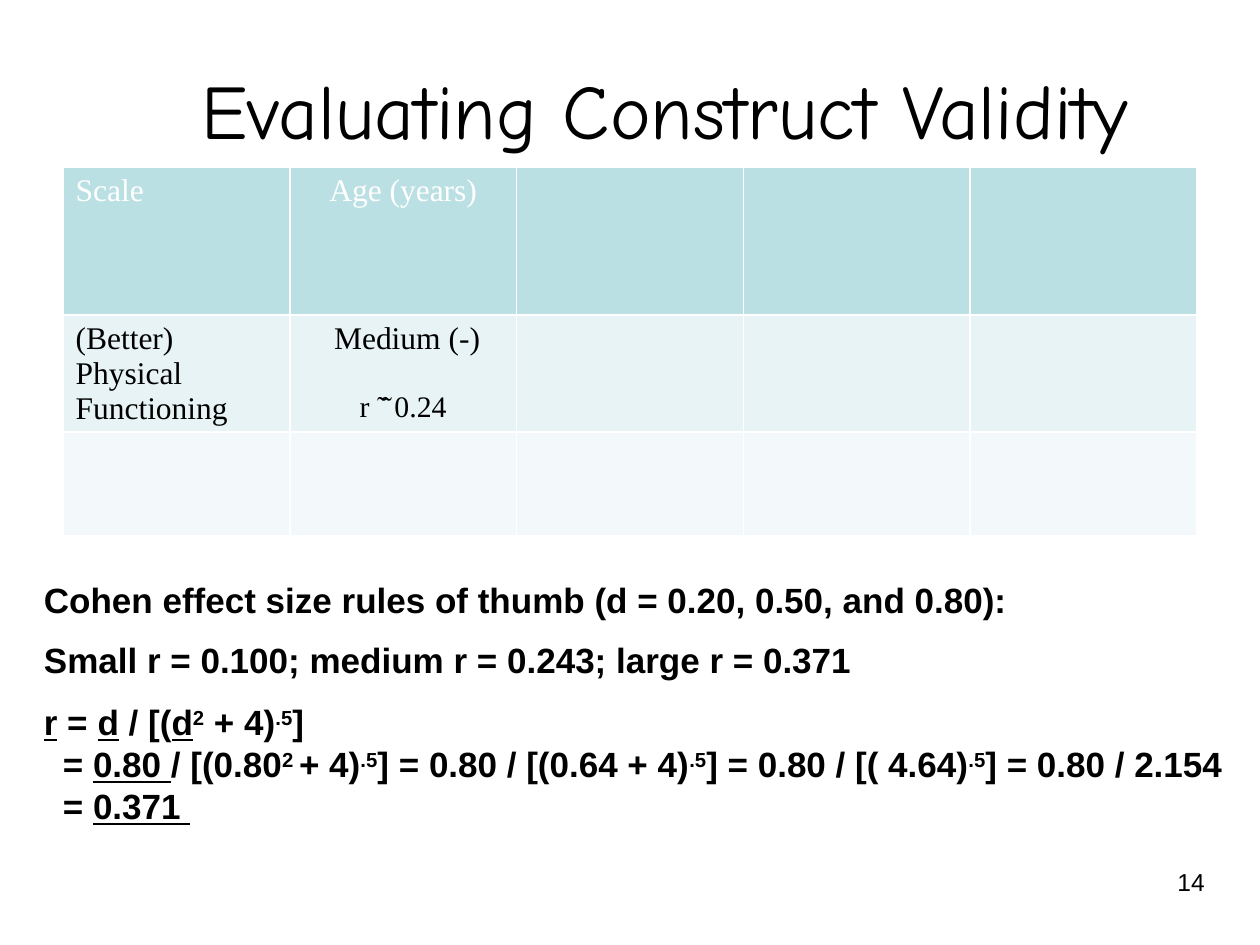
from dataclasses import dataclass

from pptx import Presentation
from pptx.dml.color import RGBColor
from pptx.enum.text import MSO_ANCHOR as Anchor, MSO_AUTO_SIZE as AutoSize, PP_ALIGN as Align
from pptx.util import Inches, Pt

BLACK, WHITE = "000000", "FFFFFF"
ROW_FILLS = ["BBE0E3", "E7F3F4", "F3F9FA"]
ROW_HEIGHTS = [1.17, 0.93, 0.82]
COLUMN_COUNT, COLUMN_WIDTH = 5, 1.8
EQUALS_INDENT = 0.15


@dataclass
class Run:
    text: str
    underline: bool = False
    raised: bool = False


@dataclass
class Line:
    runs: list[Run]
    before: float = 0
    indent: float = 0


@dataclass
class CellText:
    row: int
    column: int
    lines: list[str]
    color: str = BLACK
    align: Align = Align.CENTER


def color_of(value: str) -> RGBColor:
    return RGBColor.from_string(value)


def format_font(font, name: str, size: float, color: str = BLACK, bold: bool = False) -> None:
    for key, value in {"name": name, "size": Pt(size), "bold": bold}.items():
        setattr(font, key, value)
    font.color.rgb = color_of(color)


def paragraph_at(frame, index: int):
    return frame.paragraphs[0] if index == 0 else frame.add_paragraph()


def add_text_box(slide, left: float, top: float, width: float, height: float):
    box = slide.shapes.add_textbox(Inches(left), Inches(top), Inches(width), Inches(height))
    box.text_frame.word_wrap = True
    return box.text_frame


def write_title(slide, text: str) -> None:
    title = slide.shapes.title
    place = {"left": 0.56, "top": 0.17, "width": 9.44, "height": 1.38}
    for key, value in place.items():
        setattr(title, key, Inches(value))
    frame = title.text_frame
    frame.text = text
    frame.auto_size = AutoSize.NONE
    frame.vertical_anchor = Anchor.MIDDLE
    frame.paragraphs[0].alignment = Align.CENTER
    format_font(frame.paragraphs[0].runs[0].font, "Comic Neue", 44)


def write_cell(table, content: CellText) -> None:
    frame = table.cell(content.row, content.column).text_frame
    for index, text in enumerate(content.lines):
        paragraph = paragraph_at(frame, index)
        paragraph.alignment = content.align
        run = paragraph.add_run()
        run.text = text
        format_font(run.font, "Times New Roman", 17 if index else 18, content.color)
        if index:
            paragraph.space_before = Pt(20)


def add_scale_table(slide, contents: list[CellText]) -> None:
    table = slide.shapes.add_table(
        len(ROW_HEIGHTS), COLUMN_COUNT, Inches(0.5), Inches(1.33),
        Inches(COLUMN_COUNT * COLUMN_WIDTH), Inches(sum(ROW_HEIGHTS))).table
    for column in table.columns:
        column.width = Inches(COLUMN_WIDTH)
    for row, height, fill in zip(table.rows, ROW_HEIGHTS, ROW_FILLS):
        row.height = Inches(height)
        for cell in row.cells:
            cell.fill.solid()
            cell.fill.fore_color.rgb = color_of(fill)
    for content in contents:
        write_cell(table, content)


def write_rules(frame, lines: list[Line]) -> None:
    for index, line in enumerate(lines):
        paragraph = paragraph_at(frame, index)
        paragraph.space_before = Pt(line.before)
        if line.indent:
            paragraph._p.get_or_add_pPr().set("marL", str(Inches(line.indent)))
        for part in line.runs:
            run = paragraph.add_run()
            run.text = part.text
            format_font(run.font, "Arial", 20, bold=True)
            if part.underline:
                run.font.underline = True
            if part.raised:
                run.font._element.set("baseline", "30000")


def underlined(text: str) -> Run:
    return Run(text, underline=True)


def raised(text: str) -> Run:
    return Run(text, raised=True)


CELLS = [
    CellText(0, 0, ["Scale"], WHITE, Align.LEFT),
    CellText(0, 1, ["Age (years)"], WHITE),
    CellText(1, 0, ["(Better) Physical Functioning"], align=Align.LEFT),
    CellText(1, 1, [" Medium (-)", "r ˜͂ 0.24"]),
]

ROOT = raised(".5")
RULES = [
    Line([Run("Cohen effect size rules of thumb (d = 0.20, 0.50, and 0.80):")]),
    Line([Run("Small r = 0.100; medium r = 0.243; large r = 0.371")], before=10.5),
    Line([underlined("r"), Run(" = "), underlined("d"), Run(" / [("), underlined("d"),
          raised("2"), Run(" + 4)"), ROOT, Run("]")], before=11.5),
    Line([Run("= "), underlined("0.80 "), Run("/ [(0.80"), raised("2 "), Run("+ 4)"), ROOT,
          Run("] = 0.80 / [(0.64 + 4)"), ROOT, Run("] = 0.80 / [( 4.64)"), ROOT,
          Run("] = 0.80 / 2.154")], indent=EQUALS_INDENT),
    Line([Run("= "), underlined("0.371 ")], indent=EQUALS_INDENT),
]


def main() -> None:
    presentation = Presentation()
    presentation.slide_width, presentation.slide_height = Inches(10), Inches(7.5)
    slide = presentation.slides.add_slide(presentation.slide_layouts[5])

    # Title and table
    write_title(slide, "Evaluating Construct Validity")
    add_scale_table(slide, CELLS)

    # Effect size rules
    write_rules(add_text_box(slide, 0.25, 4.54, 9.75, 2.28), RULES)

    # Slide number
    number = add_text_box(slide, 8.06, 6.83, 1.6, 0.52).paragraphs[0]
    number.alignment = Align.RIGHT
    run = number.add_run()
    run.text = "14"
    format_font(run.font, "Arial", 14)

    presentation.save("out.pptx")


if __name__ == "__main__":
    main()
